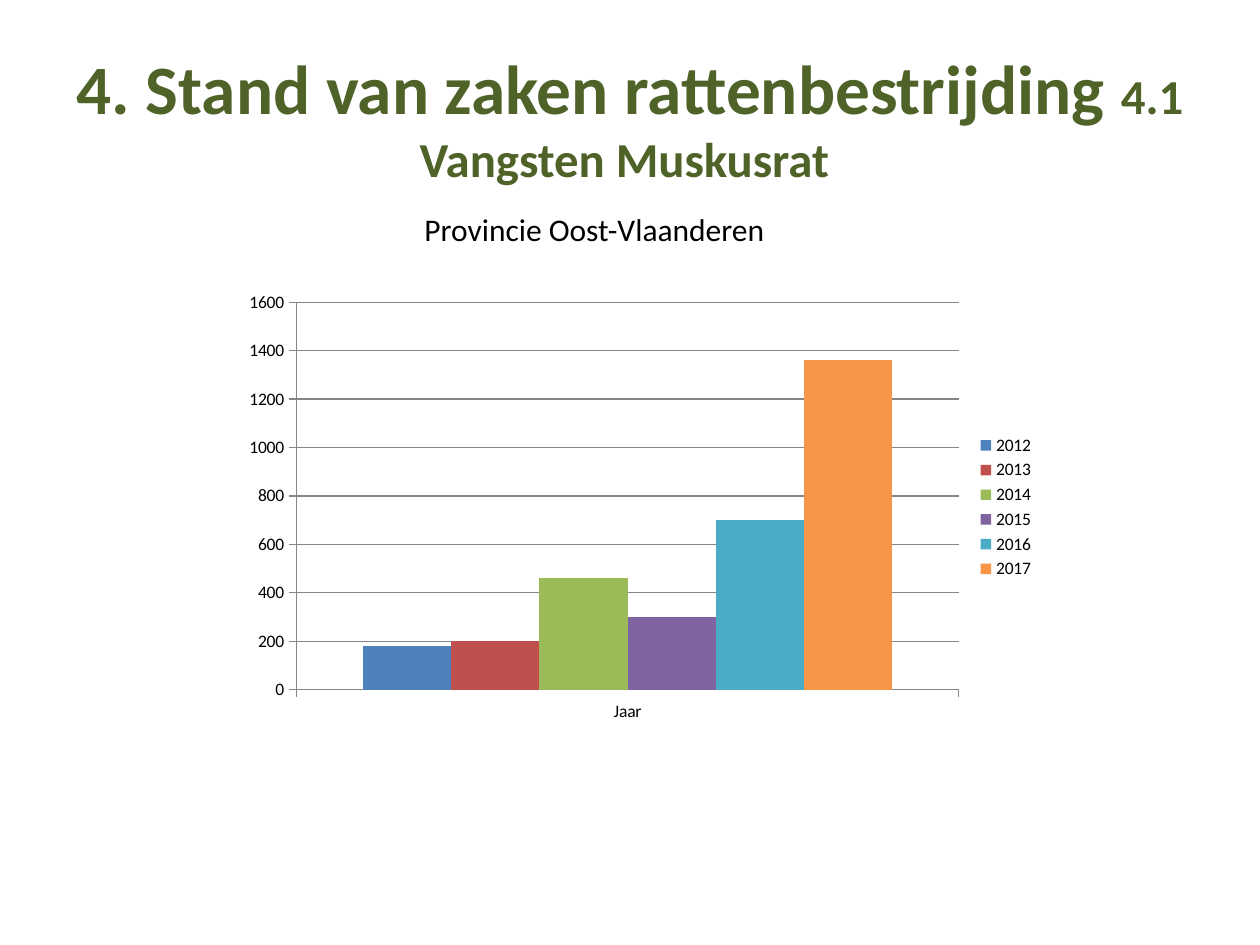
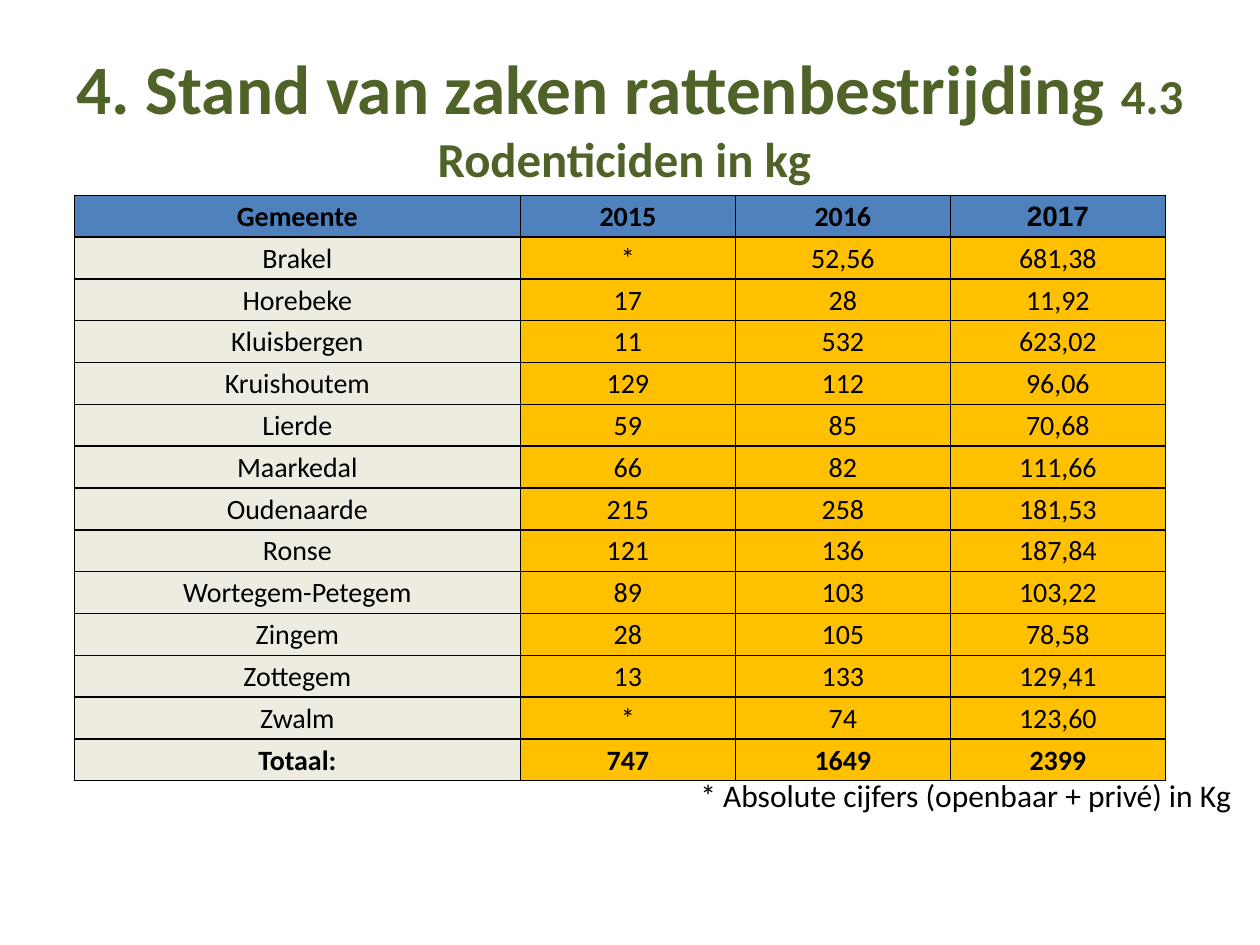
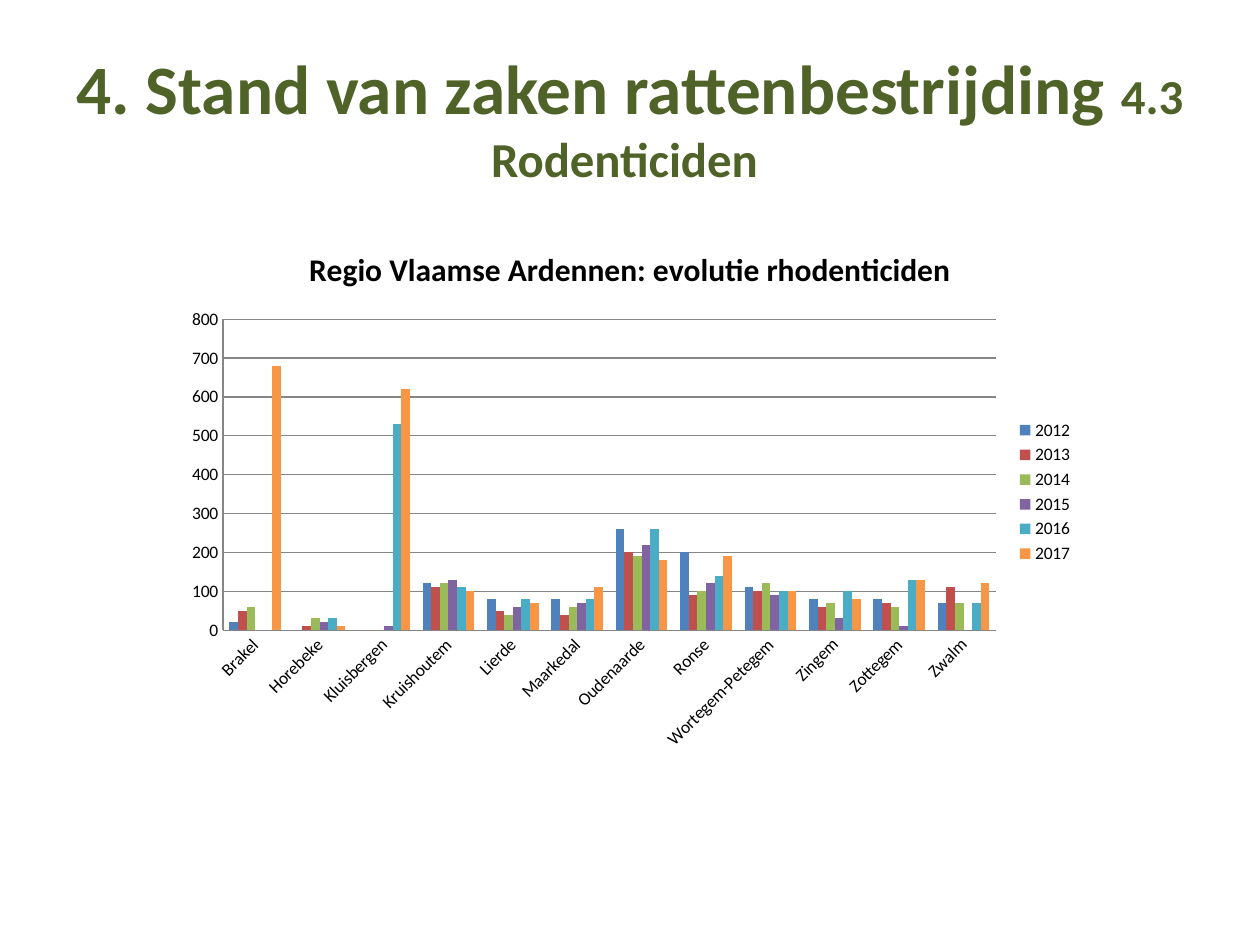
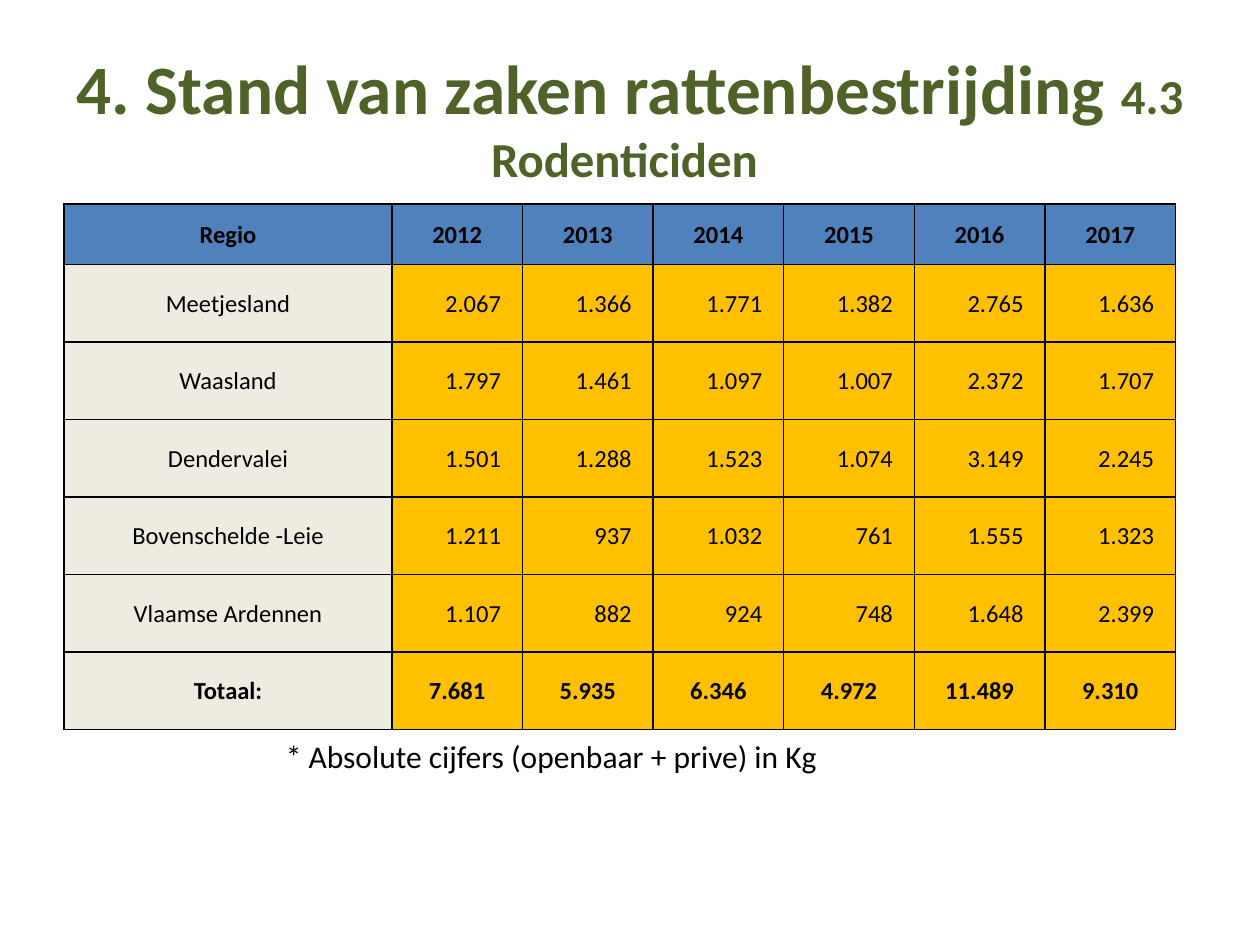
from lxml import etree
from pptx import Presentation
from pptx import util as u
from pptx.chart import data as chart_data
from pptx.dml.color import RGBColor
from pptx.enum import chart as charts, text
from pptx.oxml import ns

COLORS = {
    "title": "4F6228", "ink": "000000", "grid": "868686",
    "head": "4F81BD", "place": "EEECE1", "value": "FFC000",
}
YEARS = {
    "2012": "4F81BD", "2013": "C0504D", "2014": "9BBB59",
    "2015": "8064A2", "2016": "4BACC6", "2017": "F79646",
}
FONT = "Calibri"
COLUMNS, ROWS = 100, 75

deck = Presentation()
deck.slide_width, deck.slide_height = u.Inches(10), u.Inches(7.5)
column = deck.slide_width / COLUMNS
row = deck.slide_height / ROWS


def place(left, top, width, height):
    return [int(left * column), int(top * row), int(width * column), int(height * row)]


def style(font, size, color="ink", bold=False, face=FONT):
    font.name, font.size, font.bold = face, u.Pt(size), bold
    font.color.rgb = RGBColor.from_string(COLORS[color])


municipalities = [
    ["Gemeente", "2015", "2016", "2017"],
    ["Brakel", "*", "52,56", "681,38"],
    ["Horebeke", "17", "28", "11,92"],
    ["Kluisbergen", "11", "532", "623,02"],
    ["Kruishoutem", "129", "112", "96,06"],
    ["Lierde", "59", "85", "70,68"],
    ["Maarkedal", "66", "82", "111,66"],
    ["Oudenaarde", "215", "258", "181,53"],
    ["Ronse", "121", "136", "187,84"],
    ["Wortegem-Petegem", "89", "103", "103,22"],
    ["Zingem", "28", "105", "78,58"],
    ["Zottegem", "13", "133", "129,41"],
    ["Zwalm", "*", "74", "123,60"],
    ["Totaal:", "747", "1649", "2399"],
]
regions = [
    ["Regio", *YEARS],
    ["Meetjesland", "2.067", "1.366", "1.771", "1.382", "2.765", "1.636"],
    ["Waasland", "1.797", "1.461", "1.097", "1.007", "2.372", "1.707"],
    ["Dendervalei", "1.501", "1.288", "1.523", "1.074", "3.149", "2.245"],
    ["Bovenschelde -Leie", "1.211", "937", "1.032", "761", "1.555", "1.323"],
    ["Vlaamse Ardennen", "1.107", "882", "924", "748", "1.648", "2.399"],
    ["Totaal:", "7.681", "5.935", "6.346", "4.972", "11.489", "9.310"],
]
catches = [[180], [200], [460], [300], [700], [1360]]
rodenticides = [
    [20, 0, 0, 120, 80, 80, 260, 200, 110, 80, 80, 70],
    [50, 10, 0, 110, 50, 40, 200, 90, 100, 60, 70, 110],
    [60, 30, 0, 120, 40, 60, 190, 100, 120, 70, 60, 70],
    [0, 20, 10, 130, 60, 70, 220, 120, 90, 30, 10, 0],
    [0, 30, 530, 110, 80, 80, 260, 140, 100, 100, 130, 70],
    [680, 10, 620, 100, 70, 110, 180, 190, 100, 80, 130, 120],
]

pages = []
for topic in ["4.1 Vangsten Muskusrat", "4.3 Rodenticiden in kg",
              "4.3 Rodenticiden", "4.3 Rodenticiden"]:
    page = deck.slides.add_slide(deck.slide_layouts[6])
    heading = page.shapes.add_textbox(*place(5, 3, 90, 12.5)).text_frame
    heading.word_wrap = True
    heading.vertical_anchor = text.MSO_ANCHOR.MIDDLE
    line = heading.paragraphs[0]
    line.alignment = text.PP_ALIGN.CENTER
    for words, size in [("4. Stand van zaken rattenbestrijding ", 39.6), (topic + " ", 27.9)]:
        run = line.add_run()
        run.text = words
        style(run.font, size, "title", True)
    pages.append(page)
catch_page, municipality_page, evolution_page, region_page = pages

for page, words, spot in [
    (catch_page, "Provincie Oost-Vlaanderen", (32.7, 16.2, 31.5, 4)),
    (municipality_page, "* Absolute cijfers (openbaar + privé) in Kg", (54.6, 61.1, 45.4, 4)),
    (region_page, "* Absolute cijfers (openbaar + prive) in Kg", (21.7, 58, 45.4, 4)),
]:
    caption = page.shapes.add_textbox(*place(*spot)).text_frame
    caption.word_wrap = True
    caption.text = words
    style(caption.paragraphs[0].font, 18)

places = [record[0] for record in municipalities[1:-1]]
for page, spot, categories, figures, title, tick in [
    (catch_page, (18.5, 22.5, 64.6, 35.5), ["Jaar"], catches,
     None, charts.XL_TICK_MARK.OUTSIDE),
    (evolution_page, (13.8, 17.8, 72.4, 42.5), places, rodenticides,
     "Regio Vlaamse Ardennen: evolutie rhodenticiden", charts.XL_TICK_MARK.NONE),
]:
    numbers = chart_data.CategoryChartData(number_format="0")
    numbers.categories = categories
    for year, values in zip(YEARS, figures):
        numbers.add_series(year, values)
    chart = page.shapes.add_chart(
        charts.XL_CHART_TYPE.COLUMN_CLUSTERED, *place(*spot), numbers).chart
    style(chart.font, 10)
    chart.has_title = title is not None
    if title:
        chart.chart_title.text_frame.text = title
        style(chart.chart_title.text_frame.paragraphs[0].font, 18, bold=True)
    chart.has_legend = True
    chart.legend.position = charts.XL_LEGEND_POSITION.RIGHT
    chart.legend.include_in_layout = False
    bars = chart.plots[0]
    bars.gap_width, bars.overlap, bars.vary_by_categories = 150, 0, False
    for series, color in zip(bars.series, YEARS.values()):
        series.format.fill.solid()
        series.format.fill.fore_color.rgb = RGBColor.from_string(color)
    chart.value_axis.has_major_gridlines = True
    for axis in (chart.category_axis, chart.value_axis):
        axis.major_tick_mark = tick
        axis.minor_tick_mark = charts.XL_TICK_MARK.NONE
        style(axis.tick_labels.font, 10)
    for ruled in (chart.category_axis, chart.value_axis, chart.value_axis.major_gridlines):
        ruled.format.line.width = u.Pt(0.75)
        ruled.format.line.color.rgb = RGBColor.from_string(COLORS["grid"])
    if len(categories) > 1:
        chart.element.xpath(".//c:catAx/c:txPr/a:bodyPr")[0].set("rot", "-2700000")

for page, spot, records, first, head, size, figure_side in [
    (municipality_page, (5.9, 15.5, 86.6, 46.5), municipalities, 35.4, 3.32, 16,
     text.PP_ALIGN.CENTER),
    (region_page, (5.1, 16.2, 88.2, 41.7), regions, 26, 4.8, 14, text.PP_ALIGN.RIGHT),
]:
    table = page.shapes.add_table(len(records), len(records[0]), *place(*spot)).table
    table.first_row = table.horz_banding = False
    for i, part in enumerate(table.columns):
        share = first if i == 0 else (spot[2] - first) / (len(records[0]) - 1)
        part.width = int(share * column)
    for i, part in enumerate(table.rows):
        share = head if i == 0 else (spot[3] - head) / (len(records) - 1)
        part.height = int(share * row)
    for r, record in enumerate(records):
        for c, words in enumerate(record):
            cell = table.cell(r, c)
            cell.text = words
            cell.vertical_anchor = text.MSO_ANCHOR.MIDDLE
            cell.margin_left = cell.margin_right = cell.margin_top = u.Inches(0.01)
            cell.margin_bottom = 0
            edge = r in (0, len(records) - 1)
            entry = cell.text_frame.paragraphs[0]
            entry.alignment = text.PP_ALIGN.CENTER if edge or c == 0 else figure_side
            if entry.alignment == text.PP_ALIGN.RIGHT:
                cell.margin_right = u.Inches(0.17)
            arial = records is municipalities and r == 0 and words == "2017"
            style(entry.font, size, bold=edge, face="Arial" if arial else FONT)
            properties = cell._tc.get_or_add_tcPr()
            for side in ("lnL", "lnR", "lnT", "lnB"):
                border = etree.SubElement(properties, ns.qn("a:" + side), w=str(u.Pt(1)))
                paint = etree.SubElement(border, ns.qn("a:solidFill"))
                etree.SubElement(paint, ns.qn("a:srgbClr"), val=COLORS["ink"])
            cell.fill.solid()
            tone = "head" if r == 0 else "place" if c == 0 else "value"
            cell.fill.fore_color.rgb = RGBColor.from_string(COLORS[tone])

deck.save("out.pptx")
